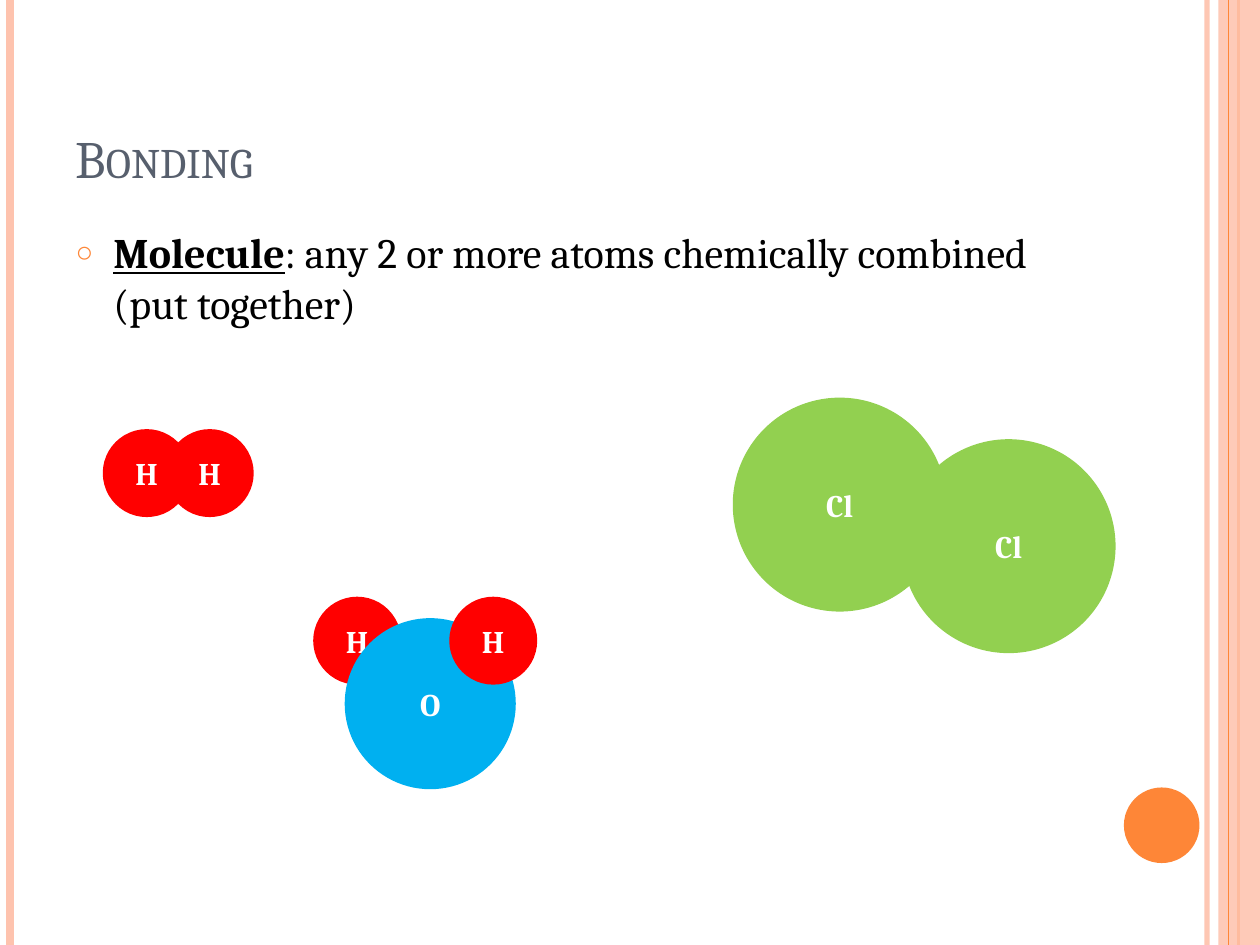
"""Build the slide on bonding and molecules."""
from lxml import etree
from pptx import Presentation
from pptx import util as u
from pptx.dml import color
from pptx.enum import shapes, text
from pptx.oxml import ns

HUES = {"peach": "FEC3AE", "orange": "FE8637", "slate": "575F6D",
        "black": "000000", "white": "FFFFFF", "red": "FF0000",
        "green": "92D050", "blue": "00B0F0"}
ATOMS = {"H": ("red", 0.67), "Cl": ("green", 1.67), "O": ("blue", 1.33)}


def rgb(hue):
    return color.RGBColor.from_string(HUES[hue])


def node(root, tag, **attrs):
    return etree.SubElement(root, ns.qn(tag), attrs)


class Deck:
    def __init__(self, face):
        self.face = face
        self.prs = Presentation()
        self.prs.slide_width, self.prs.slide_height = u.Inches(10), u.Inches(7.5)
        self.slide = self.prs.slides.add_slide(self.prs.slide_layouts[1])

    def font(self, para, size, hue, bold=None):
        font = para.font
        font.name, font.size, font.bold = self.face, u.Pt(size), bold
        font.color.rgb = rgb(hue)
        return para._p.pPr.find(ns.qn("a:defRPr"))

    def fade(self, shape, alpha):
        tint = next(shape._element.spPr.iter(ns.qn("a:srgbClr")))
        node(tint, "a:alpha", val=str(alpha * 1000))

    def place(self, shape, *box):
        shape.left, shape.top, shape.width, shape.height = map(u.Inches, box)

    def title(self, words):
        shape = self.slide.shapes.title
        self.place(shape, 0.5, 0.3, 8.17, 1.25)
        frame = shape.text_frame
        frame.text, frame.vertical_anchor = words, text.MSO_ANCHOR.BOTTOM
        para = frame.paragraphs[0]
        para.alignment = text.PP_ALIGN.LEFT
        self.font(para, 30, "slate").set("cap", "small")

    def body(self, term, rest):
        shape = self.slide.placeholders[1]
        self.place(shape, 0.5, 1.75, 8.17, 5.33)
        para = shape.text_frame.paragraphs[0]
        para.space_before = u.Pt(6)
        base = self.font(para, 24, "black")
        props = para._p.pPr
        props.set("marL", str(u.Inches(0.3)))
        props.set("indent", str(u.Inches(-0.3)))
        tint = node(props, "a:buClr")
        node(tint, "a:srgbClr", val=HUES["orange"])
        node(props, "a:buSzPct", val="70000")
        node(props, "a:buChar", char="○")
        props.append(base)
        run = para.add_run()
        run.text, run.font.bold, run.font.underline = term, True, True
        para.add_run().text = rest

    def rule(self, x, hue, width, alpha=None):
        line = self.slide.shapes.add_connector(
            shapes.MSO_CONNECTOR.STRAIGHT, u.Inches(x), 0, u.Inches(x), u.Inches(7.5))
        line.line.color.rgb, line.line.width = rgb(hue), u.Pt(width)
        node(line._element.spPr, "a:effectLst")
        if alpha:
            self.fade(line, alpha)

    def shape(self, kind, hue, *box):
        shape = self.slide.shapes.add_shape(kind, *map(u.Inches, box))
        shape.shadow.inherit = False
        shape.fill.solid()
        shape.fill.fore_color.rgb = rgb(hue)
        shape.line.fill.background()
        return shape

    def band(self, hue, alpha, *box):
        self.fade(self.shape(shapes.MSO_SHAPE.RECTANGLE, hue, *box), alpha)

    def disc(self, hue, x, y, size):
        return self.shape(shapes.MSO_SHAPE.OVAL, hue, x, y, size, size)

    def atom(self, name, x, y):
        hue, size = ATOMS[name]
        shape = self.disc(hue, x, y, size)
        shape.line.color.rgb, shape.line.width = rgb(hue), u.Pt(2)
        frame = shape.text_frame
        frame.text, frame.vertical_anchor = name, text.MSO_ANCHOR.MIDDLE
        para = frame.paragraphs[0]
        para.alignment = text.PP_ALIGN.CENTER
        self.font(para, 18, "white", True)


def main():
    deck = Deck("Cambria")
    deck.rule(9.58, "peach", 3, 93)
    deck.rule(0.08, "peach", 4.5)
    deck.rule(9.83, "orange", 1.5)
    deck.band("peach", 87, 9.67, 0, 0.33, 7.5)
    deck.rule(9.75, "orange", 0.75)
    deck.disc("orange", 8.92, 6.25, 0.6)
    deck.title("Bonding")
    deck.body("Molecule", ": any 2 or more atoms chemically combined (put together)")
    for name, x, y in (("H", 0.83, 3.42), ("H", 1.33, 3.42),
                       ("Cl", 5.83, 3.17), ("Cl", 7.17, 3.5),
                       ("H", 2.5, 4.75), ("O", 2.75, 4.92), ("H", 3.58, 4.75)):
        deck.atom(name, x, y)
    deck.prs.save("out.pptx")


if __name__ == "__main__":
    main()
